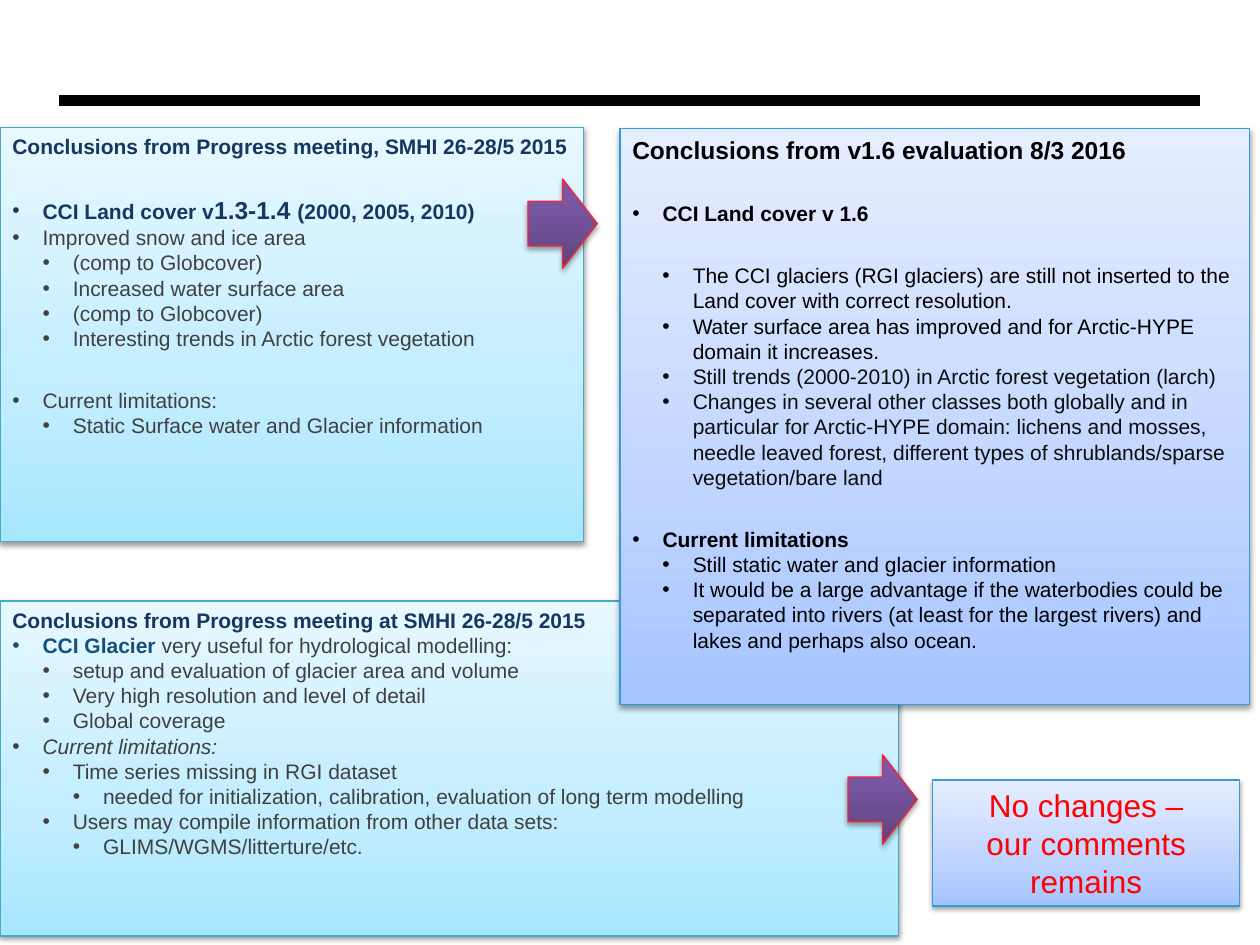
from dataclasses import dataclass

from copy import deepcopy
from lxml.etree import SubElement
from pptx import Presentation
from pptx.dml.color import RGBColor
from pptx.enum.shapes import MSO_SHAPE as Shape
from pptx.enum.text import MSO_ANCHOR as Anchor, PP_ALIGN as Align
from pptx.oxml.ns import qn
from pptx.util import Inches, Pt

COLOURS = {
    "black": "000000", "navy": "17375E", "teal": "145079", "grey": "404040",
    "ink": "0D0D0D", "red": "FF0000", "aqua line": "46AAC4",
    "blue line": "3599DE", "arrow line": "F72531",
}
GRADIENTS = {
    "aqua": [(0, "A7E6FF"), (0.35, "C1EDFF"), (1, "E7F8FF")],
    "blue": [(0, "A4C4FF"), (0.35, "BFD4FF"), (1, "E6EEFF")],
    "purple": [(0, "5F4480"), (0.8, "7B58A6"), (1, "7C57A8")],
}
FONT = "Arial"
INDENT = Inches(0.24)
SECTION_GAP = Pt(21)


@dataclass
class Span:
    text: str
    colour: str = "grey"
    bold: bool = False
    size: int = 12
    italic: bool = False


@dataclass
class Line:
    spans: list
    level: int = 0
    bullet: bool = True
    gap: bool = False


def plain(text, level=0, colour="grey", gap=False):
    return Line([Span(text, colour)], level, gap=gap)


def heading(text, colour, size=12):
    return Line([Span(text, colour, True, size)], bullet=False)


GLACIER = [
    heading("Conclusions from Progress meeting at SMHI 26-28/5 2015", "navy"),
    Line([Span("CCI Glacier ", "teal", True),
          Span("very useful for hydrological modelling:")]),
    plain("setup and evaluation of glacier area and volume", 1),
    plain("Very high resolution and level of detail", 1),
    plain("Global coverage", 1),
    Line([Span("Current limitations:", italic=True)]),
    plain("Time series missing in RGI dataset", 1),
    plain("needed for initialization, calibration, evaluation of long term modelling", 2),
    plain("Users may compile information from other data sets:", 1),
    plain("GLIMS/WGMS/litterture/etc.", 2),
]
EVALUATION = [
    heading("Conclusions from v1.6 evaluation 8/3 2016", "black", 14),
    Line([Span("CCI Land cover v 1.6", "black", True)], gap=True),
    plain("The CCI glaciers (RGI glaciers) are still not inserted to the "
          "Land cover with correct resolution.", 1, "black", gap=True),
    plain("Water surface area has improved and for Arctic-HYPE domain it increases.",
          1, "black"),
    plain("Still trends (2000-2010) in Arctic forest vegetation (larch)", 1, "ink"),
    plain("Changes in several other classes both globally and in particular for "
          "Arctic-HYPE domain: lichens and mosses, needle leaved forest, different "
          "types of shrublands/sparse vegetation/bare land", 1, "ink"),
    Line([Span("Current limitations", "black", True)], gap=True),
    plain("Still static water and glacier information", 1, "black"),
    plain("It would be a large advantage if the waterbodies could be separated into "
          "rivers (at least for the largest rivers) and lakes and perhaps also ocean.",
          1, "black"),
]
LAND_COVER = [
    heading("Conclusions from Progress meeting, SMHI 26-28/5 2015", "navy"),
    Line([Span("CCI Land cover v", "navy", True),
          Span("1.3-1.4 ", "navy", True, 14),
          Span("(2000, 2005, 2010)", "navy", True)], gap=True),
    plain("Improved snow and ice area"),
    plain("(comp to Globcover)", 1),
    plain("Increased water surface area", 1),
    plain("(comp to Globcover)", 1),
    plain("Interesting trends in Arctic forest vegetation", 1),
    plain("Current limitations:", gap=True),
    plain("Static Surface water and Glacier information", 1),
]
VERDICT = [Line([Span(text, "red", size=18)], bullet=False)
           for text in ("No changes –", "our comments remains")]


def rgb(name):
    return RGBColor.from_string(COLOURS[name])


def add_outlined(page, kind, place, line):
    shape = page.shapes.add_shape(kind, *map(Inches, place))
    shape.shadow.inherit = False
    shape.line.color.rgb = rgb(line)
    shape.line.width = Pt(0.75)
    return shape


def add_shadow(shape, alpha, distance):
    effects = shape._element.spPr.find(qn("a:effectLst"))
    shadow = SubElement(effects, qn("a:outerShdw"), blurRad=str(Pt(3.1)),
                        dist=str(Pt(distance)), dir="5400000", rotWithShape="0")
    colour = SubElement(shadow, qn("a:srgbClr"), val=COLOURS["black"])
    SubElement(colour, qn("a:alpha"), val=str(alpha * 1000))


def fill_gradient(shape, name):
    shape.fill.gradient()
    shape.fill.gradient_angle = 90
    stop_list = shape._element.spPr.find(".//" + qn("a:gsLst"))
    stop_list.append(deepcopy(stop_list[-1]))
    for stop, (position, colour) in zip(shape.fill.gradient_stops, GRADIENTS[name]):
        stop.position = position
        stop.color.rgb = RGBColor.from_string(colour)


def add_bullet(para, level):
    properties = para._p.get_or_add_pPr()
    properties.set("marL", str(INDENT * (level + 1)))
    properties.set("indent", str(-INDENT))
    SubElement(properties, qn("a:buFont"), typeface=FONT)
    SubElement(properties, qn("a:buChar"), char="•")


def add_line(para, line, align):
    para.alignment = align
    para.level = line.level
    if line.gap:
        para.space_before = SECTION_GAP
    if line.bullet:
        add_bullet(para, line.level)
    for span in line.spans:
        run = para.add_run()
        run.text = span.text
        run.font.name = FONT
        run.font.size = Pt(span.size)
        run.font.bold = span.bold
        run.font.italic = span.italic
        run.font.color.rgb = rgb(span.colour)


def add_panel(page, place, theme, lines, align=Align.LEFT, anchor=Anchor.TOP):
    box = add_outlined(page, Shape.RECTANGLE, place, theme + " line")
    fill_gradient(box, theme)
    add_shadow(box, 38, 1.6)
    frame = box.text_frame
    frame.word_wrap = True
    frame.vertical_anchor = anchor
    for index, line in enumerate(lines):
        para = frame.add_paragraph() if index else frame.paragraphs[0]
        add_line(para, line, align)


def add_arrow(page, left, top):
    arrow = add_outlined(page, Shape.RIGHT_ARROW, (left, top, 0.55, 0.71), "arrow line")
    fill_gradient(arrow, "purple")
    add_shadow(arrow, 35, 1.8)


def add_rule(page):
    rule = add_outlined(page, Shape.RECTANGLE, (0.47, 0.76, 9.05, 0.08), "black")
    rule.fill.solid()
    rule.fill.fore_color.rgb = rgb("black")


def main():
    deck = Presentation()
    deck.slide_width, deck.slide_height = Inches(10), Inches(7.5)
    page = deck.slides.add_slide(deck.slide_layouts[6])
    add_rule(page)
    add_panel(page, (0, 4.77, 7.13, 2.66), "aqua", GLACIER, Align.JUSTIFY)
    add_panel(page, (4.92, 1.02, 5, 4.57), "blue", EVALUATION)
    add_panel(page, (7.4, 6.19, 2.44, 1), "blue", VERDICT, Align.CENTER, Anchor.MIDDLE)
    add_panel(page, (0, 1.01, 4.63, 3.29), "aqua", LAND_COVER)
    add_arrow(page, 4.19, 1.42)
    add_arrow(page, 6.73, 5.99)
    deck.save("out.pptx")


if __name__ == "__main__":
    main()
